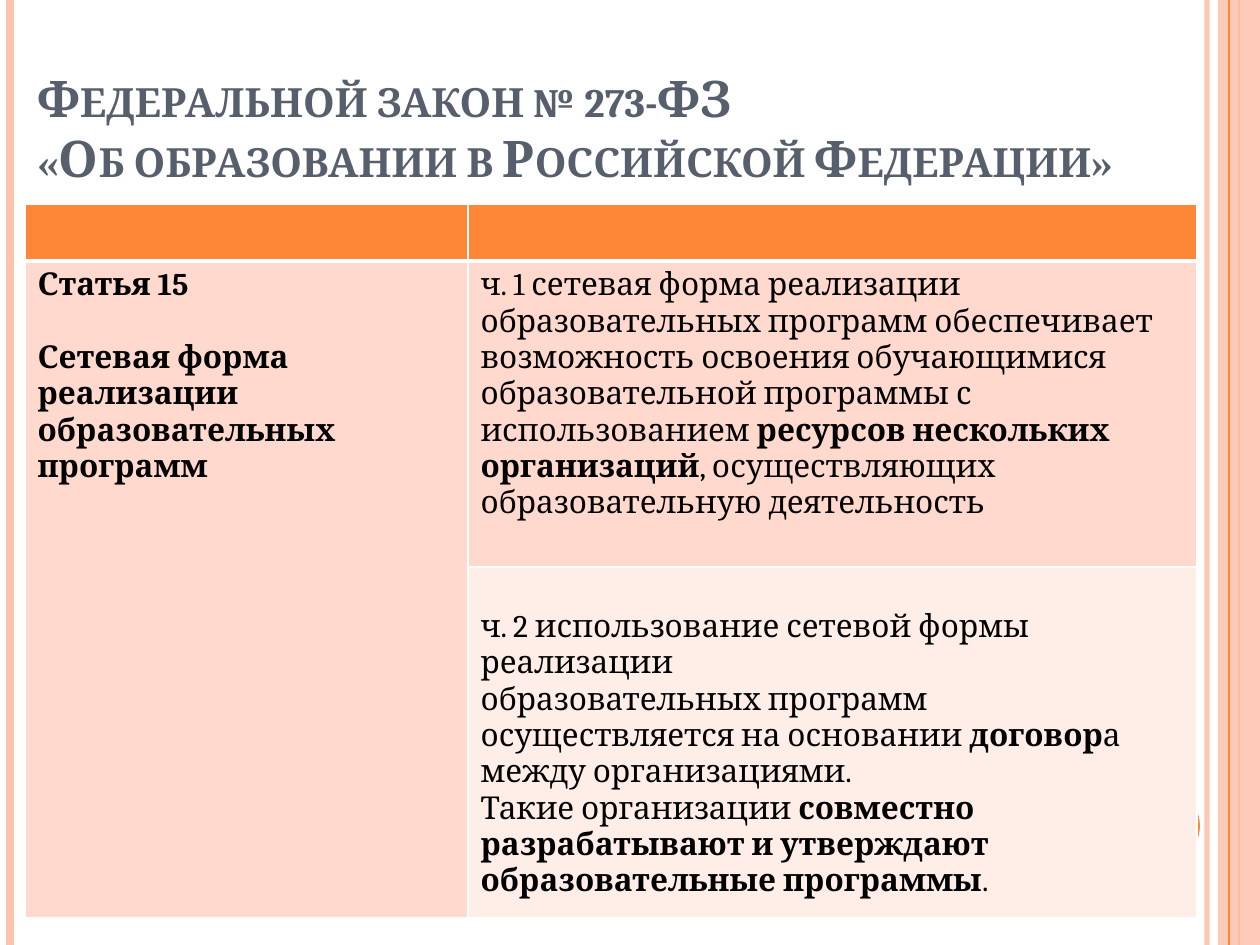
from lxml.etree import SubElement
from pptx import Presentation
from pptx.dml.color import RGBColor
from pptx.enum.shapes import MSO_CONNECTOR, MSO_SHAPE
from pptx.enum.text import MSO_ANCHOR
from pptx.oxml.ns import qn
from pptx.util import Emu, Pt

PX_PER_INCH = 126
WIDTH, HEIGHT = 1260, 945
FONT = "Cambria"

ORANGE = RGBColor(0xFE, 0x86, 0x37)
PEACH = RGBColor(0xFE, 0xC3, 0xAE)
ROSE = RGBColor(0xFF, 0xD9, 0xCE)
PALE_ROSE = RGBColor(0xFF, 0xED, 0xE8)
SLATE = RGBColor(0x57, 0x5F, 0x6D)
BLACK = RGBColor(0, 0, 0)
WHITE = RGBColor(0xFF, 0xFF, 0xFF)

TITLE_FORMAT = {"name": FONT, "size": Pt(28.8), "bold": True}
BODY_FORMAT = {"name": FONT, "size": Pt(18), "bold": False}
BOLD_FORMAT = {**BODY_FORMAT, "bold": True}
LINE_GAP = Pt(20.8)
BLANK_LINE_INSET = 42

# x, colour, width in points, opacity in percent
VERTICAL_LINES = [
    (1207, PEACH, 3, 93),
    (10, PEACH, 4.5, 100),
    (1239, ORANGE, 1.5, 100),
]
INNER_LINE = (1229, ORANGE, 0.75, 100)

TITLE = "Федеральной закон № 273-ФЗ \v«Об образовании в Российской Федерации»"

# Each paragraph is a list of (text, is bold)
ARTICLE = [
    [("Статья 15", True)],
    [("Сетевая форма реализации образовательных программ", True)],
]
PART_ONE = [[
    ("ч. 1 сетевая форма реализации образовательных программ обеспечивает "
     "возможность освоения обучающимися образовательной программы с "
     "использованием ", False),
    ("ресурсов нескольких организаций", True),
    (", осуществляющих образовательную деятельность", False),
]]
PART_TWO = [
    [("ч. 2 использование сетевой формы реализации", False)],
    [("образовательных программ осуществляется на основании ", False),
     ("договор", True),
     ("а между организациями.", False)],
    [("Такие организации ", False),
     ("совместно разрабатывают и утверждают образовательные программы", True),
     (".", False)],
]


def px(length):
    return Emu(round(length * 914400 / PX_PER_INCH))


def set_opacity(fill_parent, percent):
    if percent < 100:
        for colour in fill_parent.iter(qn("a:srgbClr")):
            SubElement(colour, qn("a:alpha"), val=str(percent * 1000))


class SlideBuilder:
    """Holds the slide and the font style that its text shares."""

    def __init__(self, slide):
        self.slide = slide

    def add_run(self, paragraph, text, colour, values):
        run = paragraph.add_run()
        run.text = text
        for name, value in values.items():
            setattr(run.font, name, value)
        run.font.color.rgb = colour
        return run

    def vertical_line(self, x, colour, width, opacity):
        line = self.slide.shapes.add_connector(
            MSO_CONNECTOR.STRAIGHT, px(x), 0, px(x), px(HEIGHT))
        line.line.color.rgb = colour
        line.line.width = Pt(width)
        properties = line._element.spPr
        set_opacity(properties, opacity)
        SubElement(properties, qn("a:effectLst"))

    def shape(self, kind, box, colour, opacity=100):
        shape = self.slide.shapes.add_shape(kind, *map(px, box))
        shape.shadow.inherit = False
        shape.fill.solid()
        shape.fill.fore_color.rgb = colour
        shape.line.fill.background()
        set_opacity(shape._element.spPr, opacity)

    def title(self, box, text):
        frame = self.slide.shapes.add_textbox(*map(px, box)).text_frame
        frame.word_wrap = True
        frame.vertical_anchor = MSO_ANCHOR.BOTTOM
        paragraph = frame.paragraphs[0]
        for index, line in enumerate(text.split("\v")):
            if index:
                paragraph.add_line_break()
            run = self.add_run(paragraph, line, SLATE, TITLE_FORMAT)
            run.font._element.set("cap", "small")

    def table(self, position, columns, rows):
        table = self.slide.shapes.add_table(
            len(rows), len(columns), *map(px, position),
            px(sum(columns)), px(sum(rows))).table
        table.first_row = table.horz_banding = False
        for column, width in zip(table.columns, columns):
            column.width = px(width)
        for row, height in zip(table.rows, rows):
            row.height = px(height)
        return table

    def cell(self, cell, colour, top=1, bottom=1):
        """Paint a cell with white borders; top and bottom are in points."""
        properties = cell._tc.get_or_add_tcPr()
        widths = {"lnL": 1, "lnR": 1, "lnT": top, "lnB": bottom}
        for side, width in widths.items():
            border = SubElement(properties, qn(f"a:{side}"), w=str(Pt(width)))
            fill = SubElement(border, qn("a:solidFill"))
            SubElement(fill, qn("a:srgbClr"), val=str(WHITE))
        cell.fill.solid()
        cell.fill.fore_color.rgb = colour

    def cell_text(self, cell, paragraphs, gap=0):
        frame = cell.text_frame
        for index, runs in enumerate(paragraphs):
            paragraph = frame.add_paragraph() if index else frame.paragraphs[0]
            if index and gap:
                paragraph.space_before = gap
            for text, is_bold in runs:
                self.add_run(paragraph, text, BLACK,
                             BOLD_FORMAT if is_bold else BODY_FORMAT)


def main():
    presentation = Presentation()
    presentation.slide_width, presentation.slide_height = px(WIDTH), px(HEIGHT)
    slide = presentation.slides.add_slide(presentation.slide_layouts[6])
    builder = SlideBuilder(slide)

    for line in VERTICAL_LINES:
        builder.vertical_line(*line)
    builder.shape(MSO_SHAPE.RECTANGLE, (1218, 0, 42, HEIGHT), PEACH, 87)
    builder.vertical_line(*INNER_LINE)
    builder.shape(MSO_SHAPE.OVAL, (1124, 788, 76, 76), ORANGE)
    builder.title((25, 38, 1221, 156), TITLE)

    table = builder.table((25, 204), (443, 729), (57, 306, 342))
    for column in range(2):
        builder.cell(table.cell(0, column), ORANGE, bottom=3)
        builder.cell(table.cell(1, column), ROSE, top=3)
        builder.cell(table.cell(2, column), PALE_ROSE if column else ROSE)
    table.cell(1, 0).merge(table.cell(2, 0))

    builder.cell_text(table.cell(1, 0), ARTICLE, LINE_GAP)
    builder.cell_text(table.cell(1, 1), PART_ONE)
    builder.cell_text(table.cell(2, 1), PART_TWO)
    table.cell(2, 1).margin_top = px(BLANK_LINE_INSET)

    presentation.save("out.pptx")


if __name__ == "__main__":
    main()
